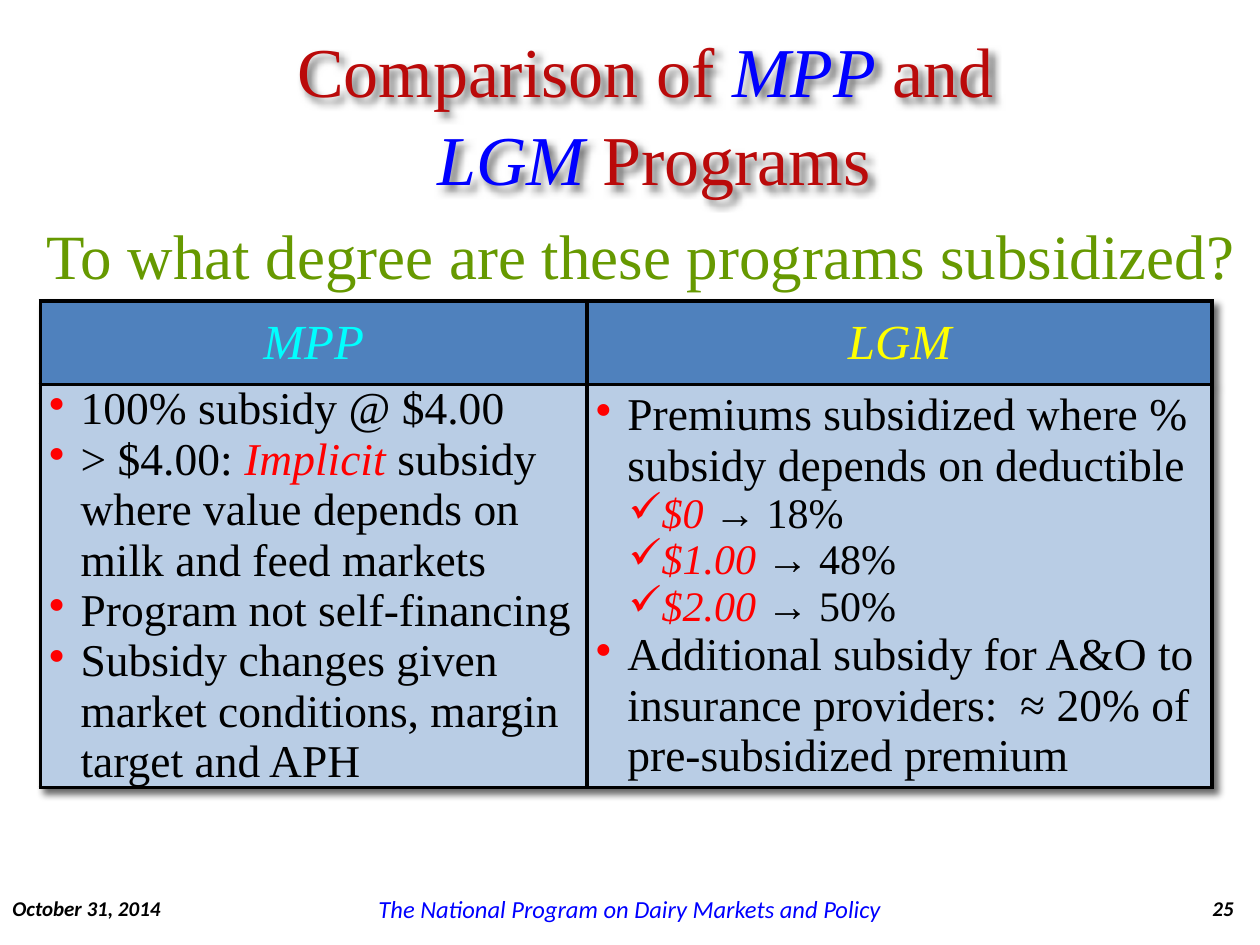
from dataclasses import dataclass

from lxml import etree
from pptx import Presentation
from pptx.dml.color import RGBColor
from pptx.enum.text import MSO_ANCHOR, PP_ALIGN
from pptx.oxml import parse_xml
from pptx.oxml.ns import nsdecls, qn
from pptx.util import Inches, Pt

LEFT, CENTER, RIGHT = PP_ALIGN.LEFT, PP_ALIGN.CENTER, PP_ALIGN.RIGHT
TOP, MIDDLE = MSO_ANCHOR.TOP, MSO_ANCHOR.MIDDLE


@dataclass(frozen=True)
class Theme:
    """Fonts, type sizes and colours of the slide."""
    serif: str = "Times New Roman"
    sans: str = "Calibri"
    title: int = 40
    question: int = 36
    header: int = 28
    body: int = 26
    detail: int = 24
    program: int = 14
    footer: int = 12
    black: str = "000000"
    red: str = "FF0000"
    blue: str = "0000FF"
    dark_red: str = "BA0A0A"
    green: str = "669900"
    cyan: str = "00FFFF"
    yellow: str = "FFFF00"
    header_fill: str = "4F81BD"
    body_fill: str = "B9CDE5"
    border: float = 2.25


THEME = Theme()


def style_font(font, size=None, name=None, color=None, bold=None, italic=None):
    """Set the given properties of a font."""
    if size:
        font.size = Pt(size)
    if name:
        font.name = name
    if color:
        font.color.rgb = RGBColor.from_string(color)
    if bold is not None:
        font.bold = bold
    if italic is not None:
        font.italic = italic


def write_paragraph(paragraph, runs, size, color, name=THEME.serif, align=LEFT, **style):
    """Write plain strings and (text, colour) emphasis pairs into a paragraph."""
    paragraph.alignment = align
    style_font(paragraph.font, size, name, color, **style)
    for part in runs:
        text, emphasis = part if isinstance(part, tuple) else (part, None)
        run = paragraph.add_run()
        run.text = text
        if emphasis:
            style_font(run.font, color=emphasis, italic=True)


def add_shadow(properties):
    """Append a soft shadow, cast down and right, to an element's properties."""
    properties.append(parse_xml(
        f'<a:effectLst {nsdecls("a")}><a:outerShdw blurRad="50800" dist="50800" '
        'dir="2700000" algn="tl" rotWithShape="0"><a:srgbClr val="000000">'
        '<a:alpha val="60000"/></a:srgbClr></a:outerShdw></a:effectLst>'))


def add_text(slide, box, lines, size, color, anchor=MIDDLE, wrap=True, **style):
    """Add a text box with one paragraph for each line."""
    shape = slide.shapes.add_textbox(*map(Inches, box))
    frame = shape.text_frame
    frame.word_wrap = wrap
    frame.vertical_anchor = anchor
    for index, runs in enumerate(lines):
        paragraph = frame.add_paragraph() if index else frame.paragraphs[0]
        write_paragraph(paragraph, runs, size, color, **style)
    return shape


def add_bullet(paragraph, character, margin):
    """Give a paragraph a red hanging bullet."""
    properties = paragraph._p.get_or_add_pPr()
    properties.set("marL", str(Inches(margin)))
    properties.set("indent", str(Inches(-0.25)))
    color = etree.SubElement(properties, qn("a:buClr"))
    etree.SubElement(color, qn("a:srgbClr"), val=THEME.red)
    etree.SubElement(properties, qn("a:buChar"), char=character)


def style_cell(cell, fill, anchor):
    """Set a cell's margins, fill, anchor and borders."""
    cell.margin_left = cell.margin_right = Inches(0.07)
    cell.margin_top = cell.margin_bottom = 0
    cell.vertical_anchor = anchor
    cell.fill.solid()
    cell.fill.fore_color.rgb = RGBColor.from_string(fill)
    for index, side in enumerate(("lnL", "lnR", "lnT", "lnB")):
        cell._tc.tcPr.insert(index, parse_xml(
            f'<a:{side} {nsdecls("a")} w="{Pt(THEME.border)}"><a:solidFill>'
            f'<a:srgbClr val="{THEME.black}"/></a:solidFill></a:{side}>'))


def write_points(cell, points):
    """Fill a cell with points; a pair is a checked deductible and its subsidy."""
    for index, point in enumerate(points):
        frame = cell.text_frame
        paragraph = frame.add_paragraph() if index else frame.paragraphs[0]
        if isinstance(point, tuple):
            deductible, subsidy = point
            add_bullet(paragraph, "✓", 0.51)
            runs = [(f"{deductible} ", THEME.red), f"→ {subsidy}"]
            write_paragraph(paragraph, runs, THEME.detail, THEME.black)
        else:
            add_bullet(paragraph, "•", 0.25)
            write_paragraph(paragraph, point, THEME.body, THEME.black)


def add_comparison(slide, columns):
    """Add the table that compares the programs."""
    table = slide.shapes.add_table(2, len(columns), Inches(0.32), Inches(2.39),
                                   Inches(9.3), Inches(3.86)).table
    table.first_row = table.horz_banding = False
    add_shadow(table._tbl.tblPr)
    style_id = table._tbl.tblPr.find(qn("a:tableStyleId"))
    if style_id is not None:
        table._tbl.tblPr.append(style_id)
    for row, height in zip(table.rows, (0.66, 3.2)):
        row.height = Inches(height)
    for index, (width, heading, color, anchor, points) in enumerate(columns):
        table.columns[index].width = Inches(width)
        header, body = table.cell(0, index), table.cell(1, index)
        style_cell(header, THEME.header_fill, MIDDLE)
        write_paragraph(header.text_frame.paragraphs[0], [heading], THEME.header,
                        color, align=CENTER, italic=True)
        style_cell(body, THEME.body_fill, anchor)
        write_points(body, points)


def add_footer(slide):
    """Add the date, the program name and the slide number."""
    for left, width, text, align, size, color, bold in (
            (0, 1.61, "October 31, 2014", LEFT, THEME.footer, THEME.black, True),
            (2.88, 4.24, "The National Program on Dairy Markets and Policy",
             CENTER, THEME.program, THEME.blue, False),
            (9.11, 0.78, "25", RIGHT, THEME.footer, THEME.black, True)):
        add_text(slide, (left, 7.09, width, 0.24), [[text]], size, color,
                 name=THEME.sans, align=align, bold=bold, italic=True)


def main():
    """Build and save the slide."""
    presentation = Presentation()
    presentation.slide_width, presentation.slide_height = Inches(10), Inches(7.5)
    slide = presentation.slides.add_slide(presentation.slide_layouts[6])
    mpp_points = [
        ["100% subsidy @ $4.00"],
        ["> $4.00: ", ("Implicit", THEME.red),
         " subsidy where value depends on milk and feed markets"],
        ["Program not self-financing"],
        ["Subsidy changes given market conditions, margin target and APH"]]
    lgm_points = [
        ["Premiums subsidized where % subsidy depends on deductible"],
        ("$0", "18%"), ("$1.00", "48%"), ("$2.00", "50%"),
        ["Additional subsidy for A&O to insurance providers:  ≈ 20% of "
         "pre-subsidized premium"]]
    add_comparison(slide, [(4.34, "MPP", THEME.cyan, TOP, mpp_points),
                           (4.96, "LGM", THEME.yellow, MIDDLE, lgm_points)])
    add_text(slide, (0.27, 1.67, 9.73, 0.71),
             [["To what degree are these programs subsidized?"]],
             THEME.question, THEME.green, anchor=TOP, wrap=False)
    add_footer(slide)
    title = add_text(slide, (1.07, 0.26, 8.1, 1.25),
                     [["Comparison of ", ("MPP ", THEME.blue), "and"],
                      [" ", ("LGM ", THEME.blue), "Programs"]],
                     THEME.title, THEME.dark_red, align=CENTER)
    for paragraph in title.text_frame.paragraphs:
        paragraph.line_spacing = 1.05
    add_shadow(title._element.spPr)
    presentation.save("out.pptx")


if __name__ == "__main__":
    main()
